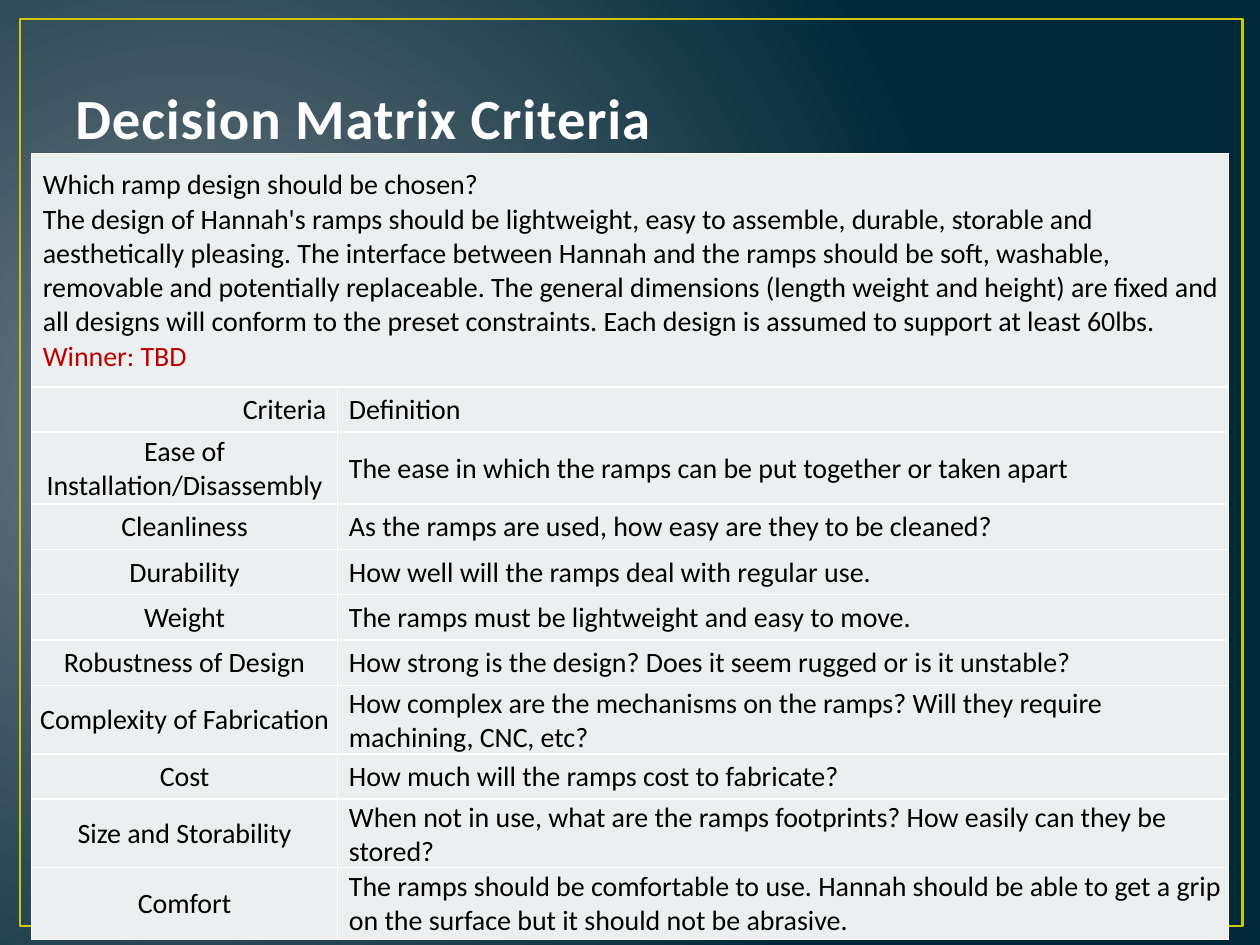
from lxml.etree import SubElement
from pptx import Presentation
from pptx.dml.color import RGBColor
from pptx.enum.shapes import MSO_SHAPE
from pptx.enum.text import MSO_ANCHOR as Anchor, PP_ALIGN as Align
from pptx.oxml import parse_xml
from pptx.oxml.ns import nsdecls, qn
from pptx.util import Inches, Pt

TITLE = "Decision Matrix Criteria"
INTRODUCTION = [
    "Which ramp design should be chosen?",
    "The design of Hannah's ramps should be lightweight, easy to assemble, durable, "
    "storable and aesthetically pleasing. The interface between Hannah and the ramps "
    "should be soft, washable, removable and potentially replaceable. The general "
    "dimensions (length weight and height) are fixed and all designs will conform to "
    "the preset constraints. Each design is assumed to support at least 60lbs.",
    "Winner: TBD",
]
CRITERIA = [
    ("Criteria", "Definition", 0.36),
    ("Ease of Installation/Disassembly",
     "The ease in which the ramps can be put together or taken apart", 0.57),
    ("Cleanliness", "As the ramps are used, how easy are they to be cleaned?", 0.36),
    ("Durability", "How well will the ramps deal with regular use.", 0.36),
    ("Weight", "The ramps must be lightweight and easy to move.", 0.36),
    ("Robustness of Design",
     "How strong is the design? Does it seem rugged or is it unstable?", 0.36),
    ("Complexity of Fabrication",
     "How complex are the mechanisms on the ramps? Will they require machining, CNC, etc?",
     0.53),
    ("Cost", "How much will the ramps cost to fabricate?", 0.36),
    ("Size and Storability",
     "When not in use, what are the ramps footprints? How easily can they be stored?", 0.53),
    ("Comfort",
     "The ramps should be comfortable to use. Hannah should be able to get a grip on the "
     "surface but it should not be abrasive.", 0.57),
]
INTRODUCTION_HEIGHT = 1.85
COLUMN_WIDTHS = (2.43, 7.07)
WIDE_INSET, THIN_INSET = Inches(0.09), Inches(0.01)
FONT = "Calibri"
TEXT_SIZE = Pt(16)

GLOW = RGBColor(0x71, 0x7C, 0x84)
NAVY = RGBColor(0x01, 0x29, 0x3A)
FRAME = RGBColor(0xCF, 0xC6, 0x0D)
TITLE_WHITE = RGBColor(0xFE, 0xFE, 0xFE)
TITLE_OUTLINE = RGBColor(0x38, 0x4F, 0x55)
CELL = RGBColor(0xEC, 0xEF, 0xF0)
BORDER = RGBColor(0xFF, 0xFF, 0xFF)
BLACK = RGBColor(0, 0, 0)
RED = RGBColor(0xC0, 0, 0)


def line_xml(tag, color, points):
    return parse_xml(
        f'<a:{tag} {nsdecls("a")} w="{Pt(points)}"><a:solidFill>'
        f'<a:srgbClr val="{color}"/></a:solidFill></a:{tag}>')


def style_font(font, size, color):
    font.name, font.size, font.color.rgb = FONT, size, color


def paint_background(slide):
    fill = slide.background.fill
    fill.gradient()
    for stop, color, position in zip(fill.gradient_stops, (GLOW, NAVY), (0, 1)):
        stop.color.rgb = color
        stop.position = position
    gradient = slide.element.find(".//" + qn("a:gradFill"))
    radial = parse_xml(
        f'<a:path {nsdecls("a")} path="circle">'
        '<a:fillToRect l="15000" t="50000" r="85000" b="60000"/></a:path>')
    gradient.replace(gradient.find(qn("a:lin")), radial)


def add_frame(slide):
    frame = slide.shapes.add_shape(
        MSO_SHAPE.RECTANGLE, Inches(0.16), Inches(0.15), Inches(9.7), Inches(7.2))
    frame.shadow.inherit = False
    frame.fill.background()
    frame.line.color.rgb = FRAME
    frame.line.width = Pt(1.5)


def add_title(slide):
    box = slide.shapes.add_textbox(Inches(0.5), Inches(0.55), Inches(9), Inches(0.7))
    text_frame = box.text_frame
    text_frame.word_wrap = True
    text_frame.vertical_anchor = Anchor.BOTTOM
    text_frame.text = TITLE
    run = text_frame.paragraphs[0].runs[0]
    style_font(run.font, Pt(32.4), TITLE_WHITE)
    run.font.bold = True
    properties = run._r.get_or_add_rPr()
    properties.set("spc", "50")
    properties.insert(0, line_xml("ln", TITLE_OUTLINE, 1.05))


def fill_cell(cell, text, align, left=THIN_INSET, right=THIN_INSET):
    cell.margin_left, cell.margin_right = left, right
    cell.margin_top, cell.margin_bottom = THIN_INSET, 0
    cell.vertical_anchor = Anchor.MIDDLE
    properties = cell._tc.get_or_add_tcPr()
    for side in "LRTB":
        properties.append(line_xml(f"ln{side}", BORDER, 1))
    cell.fill.solid()
    cell.fill.fore_color.rgb = CELL
    paragraph = cell.text_frame.paragraphs[0]
    paragraph.text = text
    paragraph.alignment = align
    for run in paragraph.runs:
        style_font(run.font, TEXT_SIZE, BLACK)
    for line_break in paragraph._p.findall(qn("a:br")):
        SubElement(line_break, qn("a:rPr"), sz="1600")


def add_criteria_table(slide):
    heights = [INTRODUCTION_HEIGHT] + [height for _, _, height in CRITERIA]
    table = slide.shapes.add_table(
        len(heights), len(COLUMN_WIDTHS), Inches(0.25), Inches(1.22),
        Inches(sum(COLUMN_WIDTHS)), Inches(sum(heights))).table
    table.first_row = table.horz_banding = False
    for column, width in zip(table.columns, COLUMN_WIDTHS):
        column.width = Inches(width)
    for row, height in zip(table.rows, heights):
        row.height = Inches(height)

    introduction = table.cell(0, 0)
    introduction.merge(table.cell(0, 1))
    fill_cell(introduction, "\v".join(INTRODUCTION), Align.LEFT, left=WIDE_INSET)
    introduction.text_frame.paragraphs[0].runs[-1].font.color.rgb = RED

    for index, (criterion, definition, _) in enumerate(CRITERIA, start=1):
        heading = index == 1
        fill_cell(table.cell(index, 0), criterion,
                  Align.RIGHT if heading else Align.CENTER,
                  right=WIDE_INSET if heading else THIN_INSET)
        fill_cell(table.cell(index, 1), definition, Align.LEFT, left=WIDE_INSET)


def main():
    presentation = Presentation()
    presentation.slide_width, presentation.slide_height = Inches(10), Inches(7.5)
    slide = presentation.slides.add_slide(presentation.slide_layouts[6])
    paint_background(slide)
    add_frame(slide)
    add_title(slide)
    add_criteria_table(slide)
    presentation.save("out.pptx")


if __name__ == "__main__":
    main()
